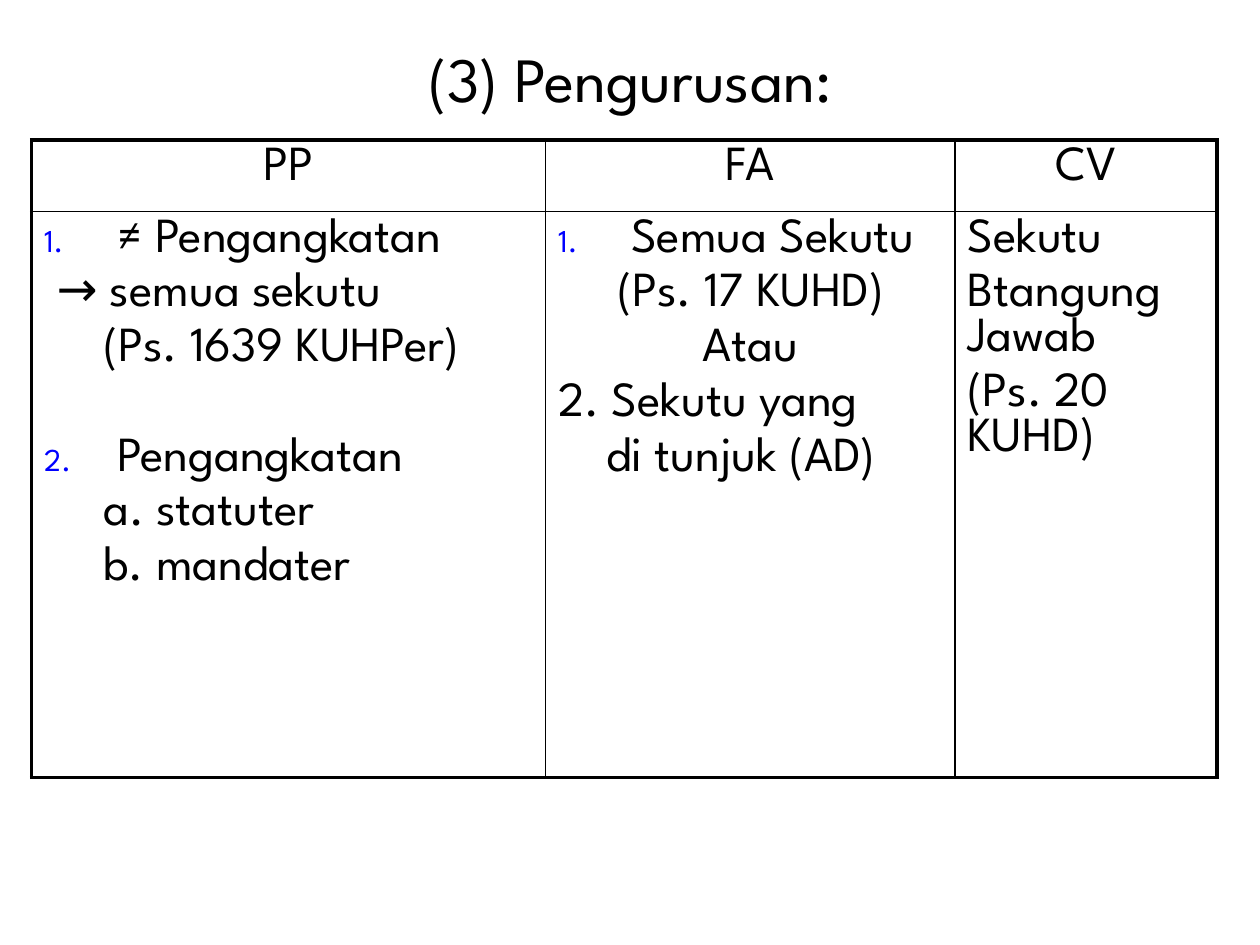
from lxml import etree
from pptx import Presentation
from pptx import util as u
from pptx.dml.color import RGBColor
from pptx.enum import text
from pptx.oxml.ns import qn

HUES = {"ink": "000000", "mark": "0000FF"}
FACE = "League Spartan"
TITLE = "(3) Pengurusan:"
HEADS = ["PP", "FA", "CV"]
BODY = [
    [
        {"text": "≠ Pengangkatan", "num": 1},
        {"text": "→ semua sekutu", "left": 0.1},
        {"text": "(Ps. 1639 KUHPer)", "left": 0.47},
        {"text": "Pengangkatan", "num": 2, "gap": 36.9},
        {"text": "a. statuter", "left": 0.47},
        {"text": "b. mandater", "left": 0.47},
    ],
    [
        {"text": "Semua Sekutu", "num": 1},
        {"text": "(Ps. 17 KUHD)", "left": 0.47},
        {"text": "Atau", "mid": True},
        {"text": "2. Sekutu yang"},
        {"text": "di tunjuk (AD)", "left": 0.38},
    ],
    [{"text": "Sekutu"}, {"text": "Btangung Jawab"}, {"text": "(Ps. 20 KUHD)"}],
]
ROWS = [[[{"text": h, "mid": True}] for h in HEADS], BODY]
WIDE = [4.08, 3.25, 2.08]
HIGH = [0.57, 4.49]
HANG = 0.58
THICK, THIN = 2.25, 1


def put(item, form):
    for key, val in form.items():
        setattr(item, key, val)


def style(run, size):
    put(run.font, {"name": FACE, "size": u.Pt(size), "bold": False})
    run.font.color.rgb = RGBColor.from_string(HUES["ink"])


def add(node, tag, **vals):
    return etree.SubElement(node, qn("a:" + tag), {k: str(v) for k, v in vals.items()})


def tint(node, hue):
    add(node, "srgbClr", val=HUES[hue])


def write(para, item):
    put(para, {
        "alignment": text.PP_ALIGN.CENTER if item.get("mid") else text.PP_ALIGN.LEFT,
        "space_before": u.Pt(item.get("gap", 5.6)),
    })
    props = para._p.get_or_add_pPr()
    num = item.get("num")
    left = HANG if num else item.get("left", 0)
    props.set("marL", str(u.Inches(left)))
    props.set("indent", str(u.Inches(-HANG if num else 0)))
    if num:
        tint(add(props, "buClr"), "mark")
        add(props, "buSzPct", val=65000)
        add(props, "buFont", typeface=FACE)
        add(props, "buAutoNum", type="arabicPeriod", startAt=num)
    run = para.add_run()
    run.text = item["text"]
    style(run, 28)


def frame(cell, row, col):
    props = cell._tc.get_or_add_tcPr()
    outer = {
        "lnL": col == 0,
        "lnR": col == len(WIDE) - 1,
        "lnT": row == 0,
        "lnB": row == len(HIGH) - 1,
    }
    for tag, edge in outer.items():
        line = add(props, tag, w=u.Pt(THICK if edge else THIN))
        tint(add(line, "solidFill"), "ink")
    cell.fill.background()


def main():
    deck = Presentation()
    put(deck, {"slide_width": u.Inches(10), "slide_height": u.Inches(7.5)})
    slide = deck.slides.add_slide(deck.slide_layouts[5])

    title = slide.shapes.title
    spots = {"left": 0.5, "top": 0.3, "width": 9, "height": 0.62}
    put(title, {k: u.Inches(v) for k, v in spots.items()})
    title.text_frame.text = TITLE
    title.text_frame.vertical_anchor = text.MSO_ANCHOR.MIDDLE
    para = title.text_frame.paragraphs[0]
    para.alignment = text.PP_ALIGN.CENTER
    style(para.runs[0], 36)

    box = [u.Inches(v) for v in (0.25, 1.11, sum(WIDE), sum(HIGH))]
    grid = slide.shapes.add_table(len(HIGH), len(WIDE), *box).table
    put(grid, {"first_row": False, "horz_banding": False})
    for col, wide in zip(grid.columns, WIDE):
        col.width = u.Inches(wide)
    for row, high in zip(grid.rows, HIGH):
        row.height = u.Inches(high)

    for r, row in enumerate(ROWS):
        for c, items in enumerate(row):
            cell = grid.cell(r, c)
            frame(cell, r, c)
            body = cell.text_frame
            for i, item in enumerate(items):
                write(body.add_paragraph() if i else body.paragraphs[0], item)

    deck.save("out.pptx")


if __name__ == "__main__":
    main()
